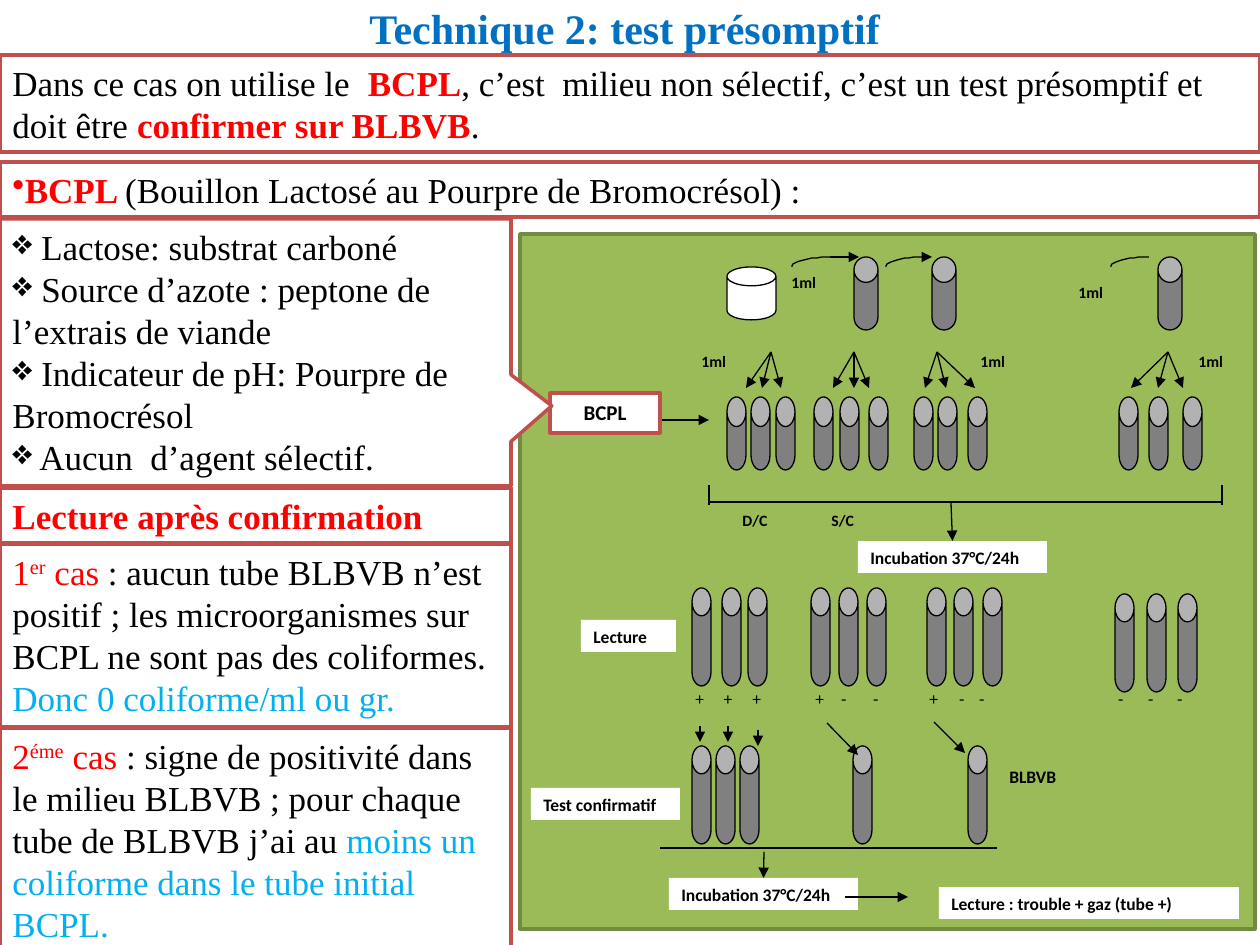
from math import cos, pi, sin

from lxml.etree import SubElement
from pptx import Presentation
from pptx.dml.color import RGBColor
from pptx.enum.shapes import MSO_CONNECTOR, MSO_SHAPE as Shape
from pptx.enum.text import MSO_ANCHOR as Anchor, PP_ALIGN as Align
from pptx.oxml.ns import qn
from pptx.util import Pt

PX = 914400 / 126
BLACK = RGBColor(0x00, 0x00, 0x00)
WHITE = RGBColor(0xFF, 0xFF, 0xFF)
RED = RGBColor(0xFF, 0x00, 0x00)
TITLE_BLUE = RGBColor(0x00, 0x70, 0xC0)
SKY = RGBColor(0x00, 0xB0, 0xF0)
BRICK = RGBColor(0xC0, 0x50, 0x4D)
GREEN = RGBColor(0x9B, 0xBB, 0x59)
DARK_GREEN = RGBColor(0x73, 0x8A, 0x42)
GREY = RGBColor(0x80, 0x80, 0x80)
SERIF, SANS = "Times New Roman", "Calibri"

# Runs are (text, colour, style); style is "", "bold" or "super"
TITLE = [[("Technique 2: test présomptif ", TITLE_BLUE, "bold")]]

# Framed panels: box, bullet, paragraphs
CALLOUT_BOX = (0, 219, 511, 267)
PANELS = [
    ((0, 162, 1260, 55), "•", [[
        ("BCPL ", RED, "bold"),
        ("(Bouillon Lactosé au Pourpre de Bromocrésol) :", BLACK, "")]]),
    (CALLOUT_BOX, "❖", [
        [(" Lactose: substrat carboné", BLACK, "")],
        [(" Source d’azote : peptone de l’extrais de viande", BLACK, "")],
        [(" Indicateur de pH: Pourpre de Bromocrésol", BLACK, "")],
        [(" Aucun  d’agent sélectif.", BLACK, "")]]),
    ((0, 488, 511, 55), None, [[("Lecture après confirmation", RED, "bold")]]),
    ((0, 728, 511, 224), None, [[
        ("2", RED, ""), ("éme", RED, "super"), (" cas", RED, ""),
        (" : signe de positivité dans le milieu BLBVB ; pour chaque tube de "
         "BLBVB j’ai au ", BLACK, ""),
        ("moins un coliforme dans le tube initial BCPL.", SKY, "")]]),
    ((0, 544, 511, 183), None, [[
        ("1", RED, ""), ("er", RED, "super"), (" cas", RED, ""),
        (" : aucun tube BLBVB n’est positif ; les microorganismes sur BCPL "
         "ne sont pas des coliformes. ", BLACK, ""),
        ("Donc 0 coliforme/ml ou gr.", SKY, "")]]),
    ((0, 55, 1260, 97), None, [[
        ("Dans ce cas on utilise le  ", BLACK, ""), ("BCPL", RED, "bold"),
        (", c’est  milieu non sélectif, c’est un test présomptif et doit être ",
         BLACK, ""),
        ("confirmer sur BLBVB", RED, "bold"), (".", BLACK, "")]]),
]

# Tube rows: top, width, height, cap ratio, fill, lefts
TUBE_ROWS = [
    (267, 49, 53, 0.385, WHITE, [727]),
    (257, 24, 73, 1.06, GREY, [854, 932, 1158]),
    (397, 19, 73, 1.56, GREY,
     [727, 751, 776, 814, 840, 869, 914, 938, 968, 1119, 1149, 1183]),
    (588, 19, 98, 1.47, GREY, [692, 722, 748, 811, 839, 867, 927, 954, 983]),
    (594, 19, 98, 1.47, GREY, [1115, 1147, 1178]),
    (746, 19, 98, 1.47, GREY, [692, 716, 740, 853, 968]),
]

# Inoculation fans: apex x, arrow tip xs
FANS = [(771, [746, 762, 781]), (854, [833, 854, 869]),
        (937, [925, 946, 975]), (1168, [1131, 1158, 1183])]
FAN_TOP, FAN_BOTTOM = 352, 388

ARROWS = [
    (660, 420, 709, 420), (830, 257, 859, 257), (925, 257, 932, 257),
    (700, 726, 700, 742), (728, 726, 728, 742), (758, 730, 758, 746),
    (827, 723, 858, 755), (934, 722, 965, 753),
]
LINES = [(660, 848, 997, 848), (710, 502, 1223, 502),
         (709, 505, 709, 485), (1222, 505, 1222, 485)]
TRANSFER_ARCS = [(792, 832), (886, 924), (1111, 1149)]  # start x, end x
ARC_TOP, ARC_BOTTOM = 257, 267

STEPS = [((531, 788, 149, 32), "Test confirmatif"),
         ((581, 620, 95, 32), "Lecture"),
         ((939, 887, 300, 32), "Lecture : trouble + gaz (tube +)")]
# Incubation boxes with the start of the arrow that reaches their top
INCUBATIONS = [((858, 541, 189, 32), (951, 502)), ((669, 878, 189, 32), (764, 852))]
INCUBATION = "Incubation 37°C/24h"

NOTES = [(779, 267, "1ml"), (1066, 277, "1ml"), (689, 346, "1ml"),
         (968, 346, "1ml"), (1186, 346, "1ml"), (730, 505, "D/C"), (819, 505, "S/C")]

# Tube results: sign, centre x
RESULTS = [("+", 700), ("+", 728), ("+", 757), ("+", 820), ("-", 844), ("-", 876),
           ("+", 934), ("-", 962), ("-", 982), ("-", 1121), ("-", 1151), ("-", 1180)]

deck = Presentation()
deck.slide_width, deck.slide_height = round(1260 * PX), round(945 * PX)
shapes = deck.slides.add_slide(deck.slide_layouts[6]).shapes


def emu(*lengths):
    return [round(length * PX) for length in lengths]


def add_box(kind, box, fill, line=None, weight=0.75):
    shape = shapes.add_shape(kind, *emu(*box))
    shape.shadow.inherit = False
    shape.fill.solid()
    shape.fill.fore_color.rgb = fill
    if line is None:
        shape.line.fill.background()
    else:
        shape.line.color.rgb = line
        shape.line.width = Pt(weight)
    return shape


def write(shape, paragraphs, size, font, align=Align.LEFT, bullet=None):
    frame = shape.text_frame
    frame.word_wrap = True
    frame.vertical_anchor = Anchor.TOP
    for index, runs in enumerate(paragraphs):
        paragraph = frame.add_paragraph() if index else frame.paragraphs[0]
        paragraph.alignment = align
        if bullet:
            SubElement(paragraph._p.get_or_add_pPr(), qn("a:buChar"), char=bullet)
        for text, colour, style in runs:
            run = paragraph.add_run()
            run.text = text
            run.font.size, run.font.name = Pt(size), font
            run.font.color.rgb = colour
            run.font.bold = style == "bold"
            if style == "super":
                run._r.get_or_add_rPr().set("baseline", "30000")


def add_line(start_x, start_y, end_x, end_y, arrow=False):
    line = shapes.add_connector(MSO_CONNECTOR.STRAIGHT, *emu(start_x, start_y, end_x, end_y))
    line.line.color.rgb = BLACK
    line.line.width = Pt(0.75)
    if arrow:
        SubElement(line.line._get_or_add_ln(), qn("a:tailEnd"), type="triangle")
    SubElement(line._element.spPr, qn("a:effectLst"))
    return line


def add_note(box, text, size, style="bold"):
    note = shapes.add_textbox(*emu(*box))
    write(note, [[(text, BLACK, style)]], size, SANS)
    return note


def add_step(box, text):
    step = add_box(Shape.RECTANGLE, box, WHITE)
    write(step, [[(text, BLACK, "bold")]], 10, SANS)
    return step


# Title and diagram background
title = add_box(Shape.RECTANGLE, (0, -4, 1260, 63), WHITE)
write(title, TITLE, 24, SERIF, Align.CENTER)
add_box(Shape.RECTANGLE, (520, 234, 735, 695), GREEN, DARK_GREEN, 2)

# Tubes
for top, width, height, cap, fill, lefts in TUBE_ROWS:
    for left in lefts:
        tube = add_box(Shape.CAN, (left, top, width, height), fill, BLACK)
        tube.adjustments[0] = cap

# Lines, arrows and transfer arcs
for ends in LINES:
    add_line(*ends)
for ends in ARROWS:
    add_line(*ends, arrow=True)
for apex, tips in FANS:
    for tip in tips:
        add_line(apex, FAN_TOP, tip, FAN_BOTTOM, arrow=True)
for start, end in TRANSFER_ARCS:
    points = [(end - (end - start) * cos(step * pi / 24),
               ARC_BOTTOM - (ARC_BOTTOM - ARC_TOP) * sin(step * pi / 24))
              for step in range(13)]
    builder = shapes.build_freeform(*points[0], scale=PX)
    builder.add_line_segments(points[1:], close=False)
    arc = builder.convert_to_shape()
    arc.shadow.inherit = False
    arc.fill.background()
    arc.line.color.rgb = BLACK
    arc.line.width = Pt(0.75)

# Step labels
medium = add_box(Shape.RECTANGLE, (550, 393, 110, 40), WHITE, BRICK, 2)
write(medium, [[("BCPL", BLACK, "bold")]], 12, SANS, Align.CENTER)
for box, text in STEPS:
    add_step(box, text)
for box, start in INCUBATIONS:
    incubation = add_step(box, INCUBATION)
    add_line(*start, *start, arrow=True).end_connect(incubation, 0)
add_line(845, 897, 908, 897, arrow=True)

# Small notes
for left, top, text in NOTES:
    add_note((left, top, 59, 32), text, 9)
add_note((997, 760, 89, 34), "BLBVB", 10)

# Results, one centred tab stop per tube
RESULTS_LEFT, INSET = 679, 12.6
results = add_note((RESULTS_LEFT, 670, 536, 50),
                   "".join("\t" + sign for sign, _ in RESULTS), 10, "")
results.text_frame.vertical_anchor = Anchor.MIDDLE
results.text_frame.margin_top = round(14 * PX)
tabs = SubElement(results.text_frame.paragraphs[0]._p.get_or_add_pPr(), qn("a:tabLst"))
for _, centre in RESULTS:
    SubElement(tabs, qn("a:tab"), algn="ctr",
               pos=str(round((centre - RESULTS_LEFT - INSET) * PX)))

# Framed panels
for box, bullet, paragraphs in PANELS:
    is_callout = box == CALLOUT_BOX
    kind = Shape.RECTANGULAR_CALLOUT if is_callout else Shape.RECTANGLE
    panel = add_box(kind, box, WHITE, BRICK, 2)
    if is_callout:
        panel.adjustments[0], panel.adjustments[1] = 0.58, 0.2
    write(panel, paragraphs, 20, SERIF, bullet=bullet)

deck.save("out.pptx")
